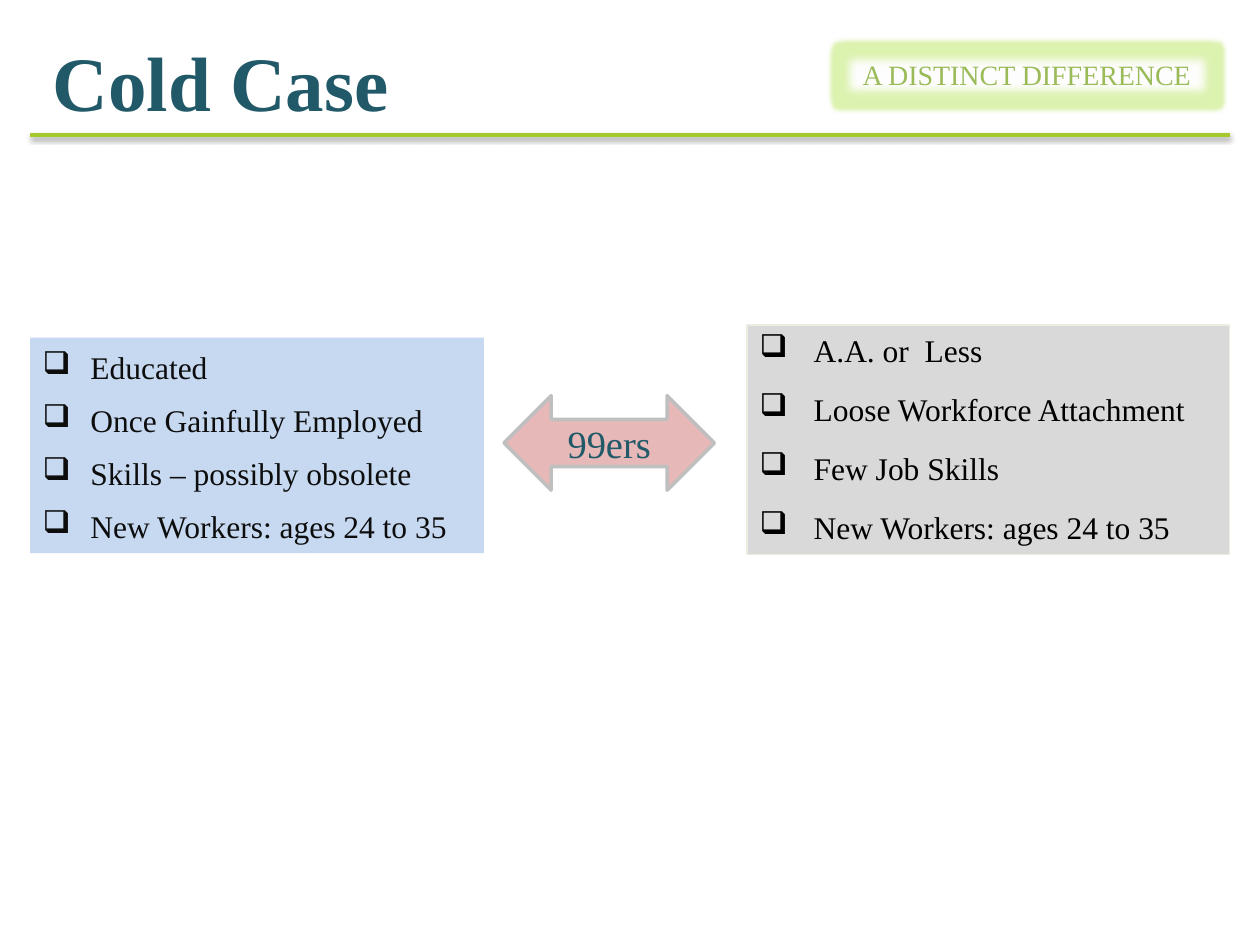
"""Build the Cold Case slide comparing two groups of workers."""
import dataclasses

import lxml.etree
import pptx
import pptx.dml.color
import pptx.enum.shapes
import pptx.enum.text
import pptx.oxml.ns
import pptx.util

COLUMNS, ROWS = 100, 75
CELL = pptx.util.Inches(0.1)
TEAL = "215968"
SHAPES = pptx.enum.shapes.MSO_SHAPE
ALIGN = pptx.enum.text.PP_ALIGN
ANCHOR = pptx.enum.text.MSO_ANCHOR


@dataclasses.dataclass
class Block:
    """A filled shape with text, placed in grid columns and rows."""

    place: tuple[float, float, float, float]
    lines: list[str]
    span_format: dict
    color: str
    fill: str | None = None
    line: str | None = None
    line_width: float = 0.75
    shape: int = SHAPES.RECTANGLE
    anchor: int = ANCHOR.TOP
    para_format: dict = dataclasses.field(default_factory=dict)
    indent: float = 0


BLOCKS = [
    Block((3.2, 2.1, 94.3, 8.6), ["Cold Case"], {"size": pptx.util.Pt(44), "bold": True},
          TEAL, anchor=ANCHOR.MIDDLE, para_format={"alignment": ALIGN.LEFT}),
    Block((2.4, 26.8, 36, 17.1),
          ["Educated", "Once Gainfully Employed", "Skills – possibly obsolete",
           "New Workers: ages 24 to 35"],
          {"size": pptx.util.Pt(18)}, "0D0D0D", "C6D9F1", indent=3.8,
          para_format={"alignment": ALIGN.LEFT, "line_spacing": 1.12,
                       "space_before": pptx.util.Pt(6)}),
    Block((59.3, 25.8, 38.3, 18.2),
          ["A.A. or  Less", "Loose Workforce Attachment", "Few Job Skills",
           "New Workers: ages 24 to 35"],
          {"size": pptx.util.Pt(18)}, "000000", "D9D9D9", "EEECE1", indent=4.3,
          para_format={"alignment": ALIGN.LEFT, "space_before": pptx.util.Pt(6),
                       "space_after": pptx.util.Pt(6)}),
    Block((40, 31.4, 16.7, 7.5), ["99ers"], {"size": pptx.util.Pt(22)}, TEAL,
          "E6B9B8", "BFBFBF", 2, SHAPES.LEFT_RIGHT_ARROW, ANCHOR.MIDDLE,
          {"alignment": ALIGN.CENTER}),
]
BADGE = Block((66.8, 4.1, 29.4, 3.7), ["A DISTINCT DIFFERENCE"],
              {"size": pptx.util.Pt(16)}, "9BBB59", "FFFFFF", "FFFFFF",
              para_format={"alignment": ALIGN.CENTER})


def grid(count: float) -> int:
    """Turn a number of grid cells into a length."""
    return round(count * CELL)


def rgb(color: str) -> pptx.dml.color.RGBColor:
    """Turn a hex string into a colour."""
    return pptx.dml.color.RGBColor.from_string(color)


def apply(target, values: dict) -> None:
    """Set every attribute named in a dict of format values."""
    for name, value in values.items():
        setattr(target, name, value)


def add_xml(parent, tag: str, **attributes):
    """Append a DrawingML element and return it."""
    return lxml.etree.SubElement(parent, pptx.oxml.ns.qn(tag), attributes)


def add_effect(effects, tag: str, color: str, alpha: int, **attributes) -> None:
    """Append a coloured effect such as a glow or a shadow."""
    effect = add_xml(effects, tag, **attributes)
    tint = add_xml(effect, "a:srgbClr", val=color)
    add_xml(tint, "a:alpha", val=str(alpha * 1000))


def add_bullet(para, indent: float) -> None:
    """Give a paragraph a hanging box bullet."""
    properties = para._p.get_or_add_pPr()
    properties.set("marL", str(grid(indent)))
    properties.set("indent", str(-grid(indent)))
    add_xml(properties, "a:buChar", char="❑")
    tabs = add_xml(properties, "a:tabLst")
    add_xml(tabs, "a:tab", pos=str(grid(3.8)), algn="l")


def write_lines(box, block: Block) -> None:
    """Write one paragraph for each line of a block."""
    frame = box.text_frame
    apply(frame, {"word_wrap": True, "vertical_anchor": block.anchor})
    for index, line in enumerate(block.lines):
        para = frame.add_paragraph() if index else frame.paragraphs[0]
        if block.indent:
            add_bullet(para, block.indent)
        apply(para, block.para_format)
        if not index:
            para.space_before = pptx.util.Pt(0)
        span = para.add_run()
        span.text = line
        apply(span.font, {"name": "Times New Roman", **block.span_format})
        span.font.color.rgb = rgb(block.color)


def add_block(page, block: Block):
    """Draw a block and return its box."""
    place = [grid(count) for count in block.place]
    if block.fill is None:
        box = page.shapes.add_textbox(*place)
    else:
        box = page.shapes.add_shape(block.shape, *place)
        box.shadow.inherit = False
        box.fill.solid()
        box.fill.fore_color.rgb = rgb(block.fill)
        if block.line:
            box.line.color.rgb = rgb(block.line)
            box.line.width = pptx.util.Pt(block.line_width)
        else:
            box.line.fill.background()
    write_lines(box, block)
    return box


def add_rule(page) -> None:
    """Draw the shadowed line under the title."""
    margin, row = 2.4, 10.7
    rule = page.shapes.add_connector(
        pptx.enum.shapes.MSO_CONNECTOR.STRAIGHT,
        grid(margin), grid(row), grid(COLUMNS - margin), grid(row))
    rule.line.color.rgb = rgb("A5C92B")
    rule.line.width = pptx.util.Pt(2)
    effects = add_xml(rule._element.spPr, "a:effectLst")
    add_effect(effects, "a:outerShdw", "000000", 38, blurRad=str(pptx.util.Pt(3.1)),
               dist=str(pptx.util.Pt(1.6)), dir="5400000", rotWithShape="0")


def add_badge(page) -> None:
    """Draw the glowing badge in the corner."""
    box = add_block(page, BADGE)
    effects = box._element.spPr.find(pptx.oxml.ns.qn("a:effectLst"))
    radius = str(pptx.util.Pt(5))
    add_effect(effects, "a:glow", "DDF3B0", 100, rad=radius)
    add_xml(effects, "a:softEdge", rad=radius)


def main() -> None:
    """Build and save the deck."""
    deck = pptx.Presentation()
    apply(deck, {"slide_width": grid(COLUMNS), "slide_height": grid(ROWS)})
    page = deck.slides.add_slide(deck.slide_layouts[6])
    add_rule(page)
    for block in BLOCKS:
        add_block(page, block)
    add_badge(page)
    deck.save("out.pptx")


if __name__ == "__main__":
    main()
